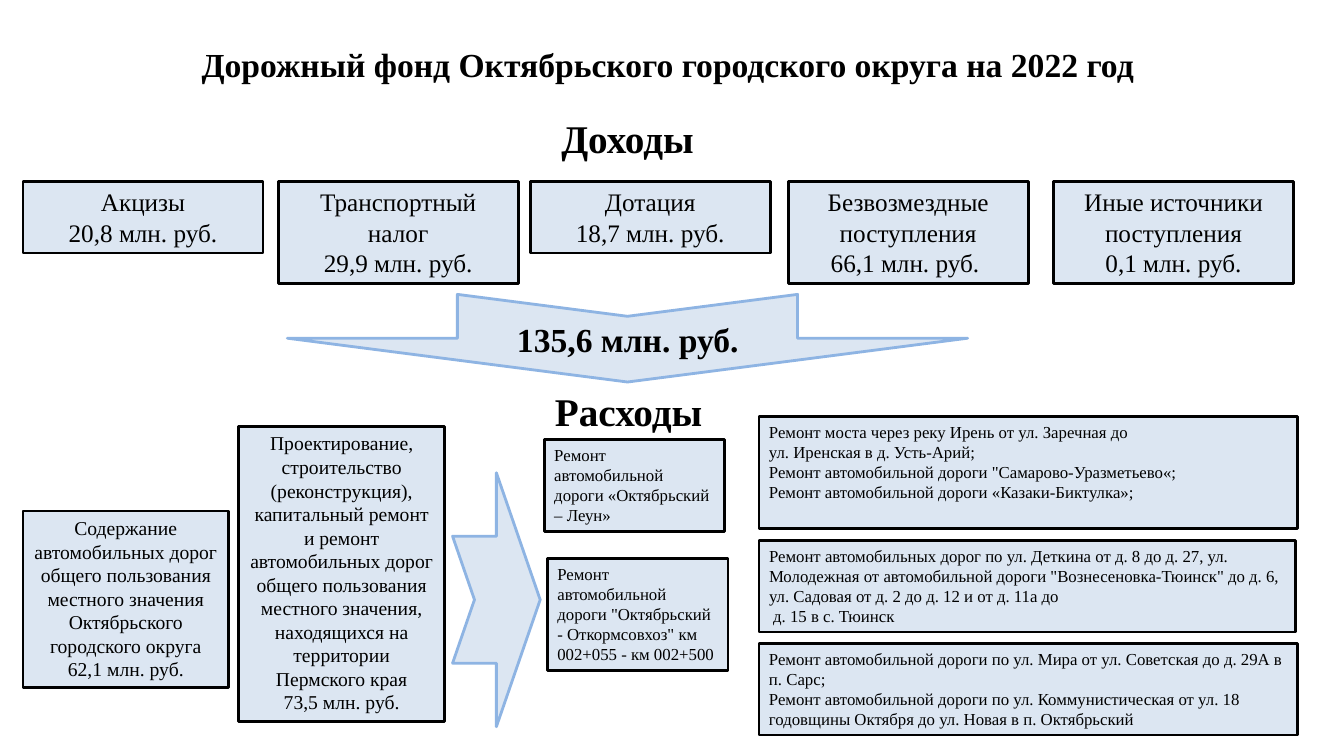
from pptx import Presentation
from pptx import util as u
from pptx.dml.color import RGBColor
from pptx.enum import shapes, text

BLACK = RGBColor(0x00, 0x00, 0x00)
PALE_BLUE = RGBColor(0xDC, 0xE6, 0xF2)
ARROW_BLUE = RGBColor(0x8E, 0xB4, 0xE3)
LEFT, CENTER = text.PP_ALIGN.LEFT, text.PP_ALIGN.CENTER
TOP, MIDDLE = text.MSO_ANCHOR.TOP, text.MSO_ANCHOR.MIDDLE


class FundSlide:
    font = "Times New Roman"
    line_width = 2

    def __init__(self, slide):
        self.slide = slide

    def set_lines(self, shape, lines, size, bold=False, align=CENTER, anchor=TOP):
        frame = shape.text_frame
        frame.word_wrap = True
        frame.vertical_anchor = anchor
        frame.text = "\n".join(lines)
        for paragraph in frame.paragraphs:
            paragraph.alignment = align
            for run in paragraph.runs:
                run.font.name = self.font
                run.font.size = u.Pt(size)
                run.font.bold = bold
                run.font.color.rgb = BLACK

    def heading(self, wording, left, top, width, height, size, **style):
        label = self.slide.shapes.add_textbox(*map(u.Pt, (left, top, width, height)))
        self.set_lines(label, [wording], size, bold=True, **style)

    def filled(self, kind, bounds, line_color):
        shape = self.slide.shapes.add_shape(kind, *map(u.Pt, bounds))
        shape.shadow.inherit = False
        shape.fill.solid()
        shape.fill.fore_color.rgb = PALE_BLUE
        shape.line.color.rgb = line_color
        shape.line.width = u.Pt(self.line_width)
        return shape

    def box(self, lines, left, top, width, height, size, align=CENTER):
        shape = self.filled(shapes.MSO_SHAPE.RECTANGLE, (left, top, width, height), BLACK)
        self.set_lines(shape, lines, size, align=align)

    def arrow(self, left, top, width, height, rotation=0):
        shape = self.filled(shapes.MSO_SHAPE.NOTCHED_RIGHT_ARROW,
                            (left, top, width, height), ARROW_BLUE)
        shape.rotation = rotation


INCOME_TOP, INCOME_WIDTH = 129.8, 171.4
INCOME = [  # left, height, lines
    (16.4, 51, ["Акцизы", "20,8 млн. руб."]),
    (198.7, 73, ["Транспортный налог", "29,9 млн. руб."]),
    (378.7, 51, ["Дотация", "18,7 млн. руб."]),
    (563, 73, ["Безвозмездные поступления", "66,1 млн. руб. "]),
    (752.5, 73, ["Иные источники поступления", "0,1 млн. руб."]),
]

SPENDING_WIDTH = 147
SPENDING = [  # left, top, height, lines
    (16.4, 365, 126, [
        "Содержание автомобильных дорог общего пользования местного значения "
        "Октябрьского городского округа",
        "62,1 млн. руб."]),
    (170.6, 304.6, 211, [
        "Проектирование, строительство (реконструкция), капитальный ремонт и ремонт "
        "автомобильных дорог общего пользования местного значения, находящихся на "
        "территории Пермского края",
        "73,5 млн. руб."]),
]

REPAIRS = [  # left, top, width, height, lines
    (388.8, 313.9, 129, 65.5, ["Ремонт автомобильной дороги «Октябрьский – Леун»"]),
    (391, 398.9, 129, 80, [
        'Ремонт автомобильной дороги "Октябрьский - Откормсовхоз" км 002+055 - км 002+500']),
    (542.2, 297.7, 384.5, 80, [
        "Ремонт моста через реку Ирень от ул. Заречная до",
        "ул. Иренская в д. Усть-Арий;",
        'Ремонт автомобильной дороги "Самарово-Уразметьево«;',
        "Ремонт автомобильной дороги «Казаки-Биктулка»;"]),
    (542.2, 386, 383, 65.5, [
        "Ремонт автомобильных дорог по ул. Деткина от д. 8 до д. 27, ул. Молодежная "
        'от автомобильной дороги "Вознесеновка-Тюинск" до д. 6, ул. Садовая от д. 2 '
        "до д. 12 и от д. 11а до",
        " д. 15 в с. Тюинск"]),
    (542.2, 459.5, 384.5, 65.5, [
        "Ремонт автомобильной дороги по ул. Мира от ул. Советская до д. 29А в п. Сарс;",
        "Ремонт автомобильной дороги по ул. Коммунистическая от ул. 18 годовщины "
        "Октября до ул. Новая в п. Октябрьский"]),
]


def main():
    deck = Presentation()
    deck.slide_width, deck.slide_height = u.Pt(960), u.Pt(540)
    fund = FundSlide(deck.slides.add_slide(deck.slide_layouts[6]))

    fund.heading("Дорожный фонд Октябрьского городского округа на 2022 год ",
                 48, 16, 864, 59, 24, anchor=MIDDLE)
    fund.heading("Доходы", 378.7, 77.8, 139, 41, 28)
    fund.heading("Расходы", 384, 272.9, 130, 41, 28)

    for left, height, lines in INCOME:
        fund.box(lines, left, INCOME_TOP, INCOME_WIDTH, height, 18)
    for left, top, height, lines in SPENDING:
        fund.box(lines, left, top, SPENDING_WIDTH, height, 14)
    for left, top, width, height, lines in REPAIRS:
        fund.box(lines, left, top, width, height, 12, align=LEFT)

    fund.arrow(416.9, -1.4, 62.6, 486, rotation=90)
    fund.arrow(323.3, 337.7, 62.6, 181.4)
    fund.heading("135,6 млн. руб.", 362.2, 223.9, 204.5, 65.5, 24, align=LEFT)

    deck.save("out.pptx")


if __name__ == "__main__":
    main()
